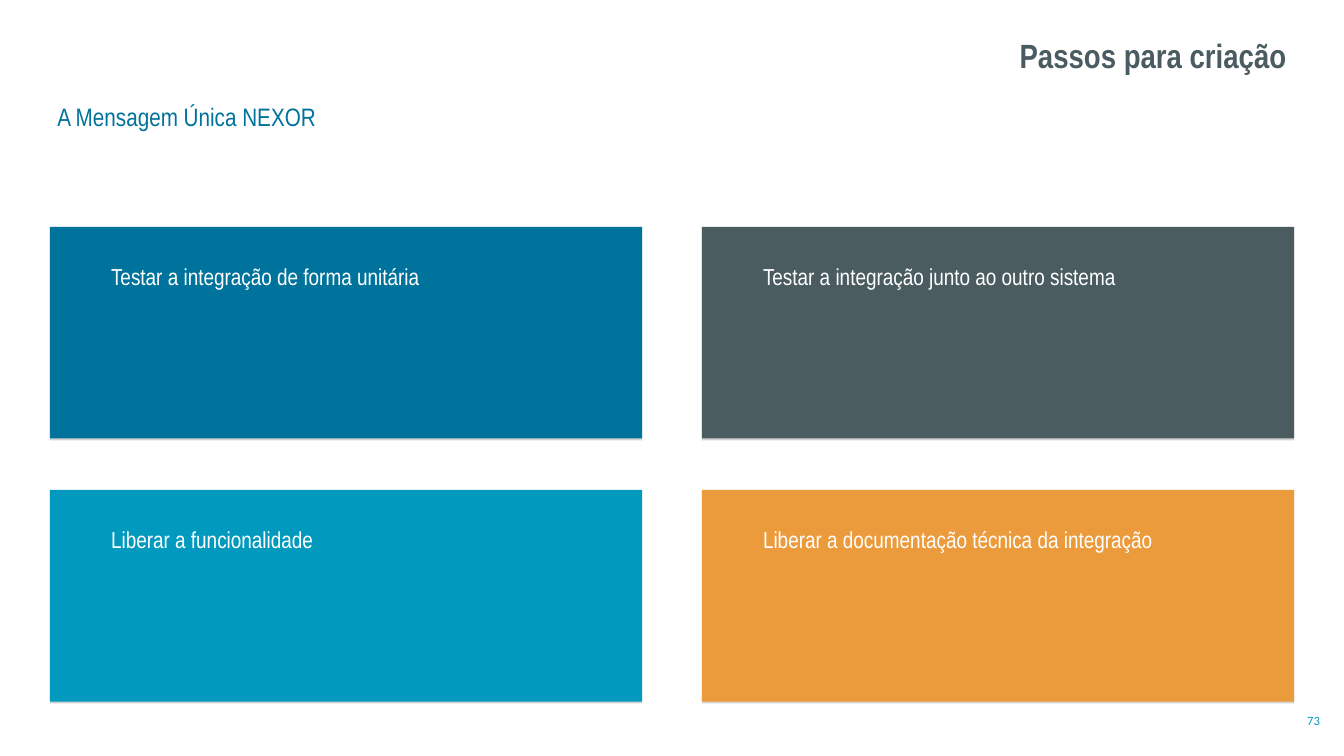
from dataclasses import dataclass

import pptx
import pptx.dml.color
import pptx.enum.shapes
import pptx.enum.text
import pptx.oxml
import pptx.oxml.ns
import pptx.util
from pptx.util import Inches

ALIGN = pptx.enum.text.PP_ALIGN
ANCHOR = pptx.enum.text.MSO_ANCHOR
LEFT, TOP = 0.66, 3
CARD_W, CARD_H = 7.83, 2.8
STEP_X, STEP_Y = 8.62, 3.48


@dataclass
class Card:
    text: str
    color: str
    col: int
    row: int


@dataclass
class Label:
    text: str
    left: float
    top: float
    width: float
    height: float
    size: int
    color: str
    font: str = "Arial Narrow"
    bold: bool = False
    align: ALIGN = ALIGN.LEFT
    anchor: ANCHOR = ANCHOR.TOP
    grow: bool = False


CARDS = [
    Card("Testar a integração de forma unitária", "00739C", 0, 0),
    Card("Testar a integração junto ao outro sistema", "4A5C60", 1, 0),
    Card("Liberar a funcionalidade", "019ABE", 0, 1),
    Card("Liberar a documentação técnica da integração", "EC9B3C", 1, 1),
]
LABELS = [
    Label("A Mensagem Única NEXOR", 0.66, 1.29, 4.04, 0.93, 24, "00739C"),
    Label("Passos para criação", 5.61, 0.41, 11.5, 0.61, 32, "4A5C61",
          bold=True, align=ALIGN.RIGHT),
    Label("73", 13.4, 9.27, 4.15, 0.53, 12, "0C9AC0", font="Calibri",
          align=ALIGN.RIGHT, anchor=ANCHOR.MIDDLE),
]


def rgb(value: str) -> pptx.dml.color.RGBColor:
    return pptx.dml.color.RGBColor.from_string(value)


def add_shadow(sp) -> None:
    """Replace the theme shadow with a thin grey one straight below."""
    sp.shadow.inherit = False
    effects = sp.element.spPr.find(pptx.oxml.ns.qn("a:effectLst"))
    effects.append(pptx.oxml.parse_xml(
        f'<a:outerShdw {pptx.oxml.ns.nsdecls("a")} blurRad="0" '
        f'dist="{pptx.util.Pt(1.8)}" dir="5400000" rotWithShape="0">'
        '<a:srgbClr val="808080"><a:alpha val="35000"/></a:srgbClr>'
        '</a:outerShdw>'))


def draw_label(s, label: Label) -> None:
    sp = s.shapes.add_textbox(Inches(label.left), Inches(label.top),
                              Inches(label.width), Inches(label.height))
    tf = sp.text_frame
    tf.word_wrap = True
    tf.vertical_anchor = label.anchor
    if label.grow:
        tf.auto_size = pptx.enum.text.MSO_AUTO_SIZE.SHAPE_TO_FIT_TEXT
    p = tf.paragraphs[0]
    p.alignment = label.align
    r = p.add_run()
    r.text = label.text
    r.font.name = label.font
    r.font.size = pptx.util.Pt(label.size)
    r.font.bold = label.bold
    r.font.color.rgb = rgb(label.color)


def draw_card(s, card: Card) -> None:
    left = LEFT + card.col * STEP_X
    top = TOP + card.row * STEP_Y
    sp = s.shapes.add_shape(pptx.enum.shapes.MSO_SHAPE.RECTANGLE,
                            Inches(left), Inches(top),
                            Inches(CARD_W), Inches(CARD_H))
    sp.fill.solid()
    sp.fill.fore_color.rgb = rgb(card.color)
    sp.line.fill.background()
    add_shadow(sp)
    draw_label(s, Label(card.text, left + 0.71, top + 0.42, 6.41, 0.47,
                        22, "FFFFFF", grow=True))


def main() -> None:
    prs = pptx.Presentation()
    prs.slide_width = Inches(17.77)
    prs.slide_height = Inches(10)
    s = prs.slides.add_slide(prs.slide_layouts[6])
    for card in CARDS:
        draw_card(s, card)
    for label in LABELS:
        draw_label(s, label)
    prs.save("out.pptx")


if __name__ == "__main__":
    main()
